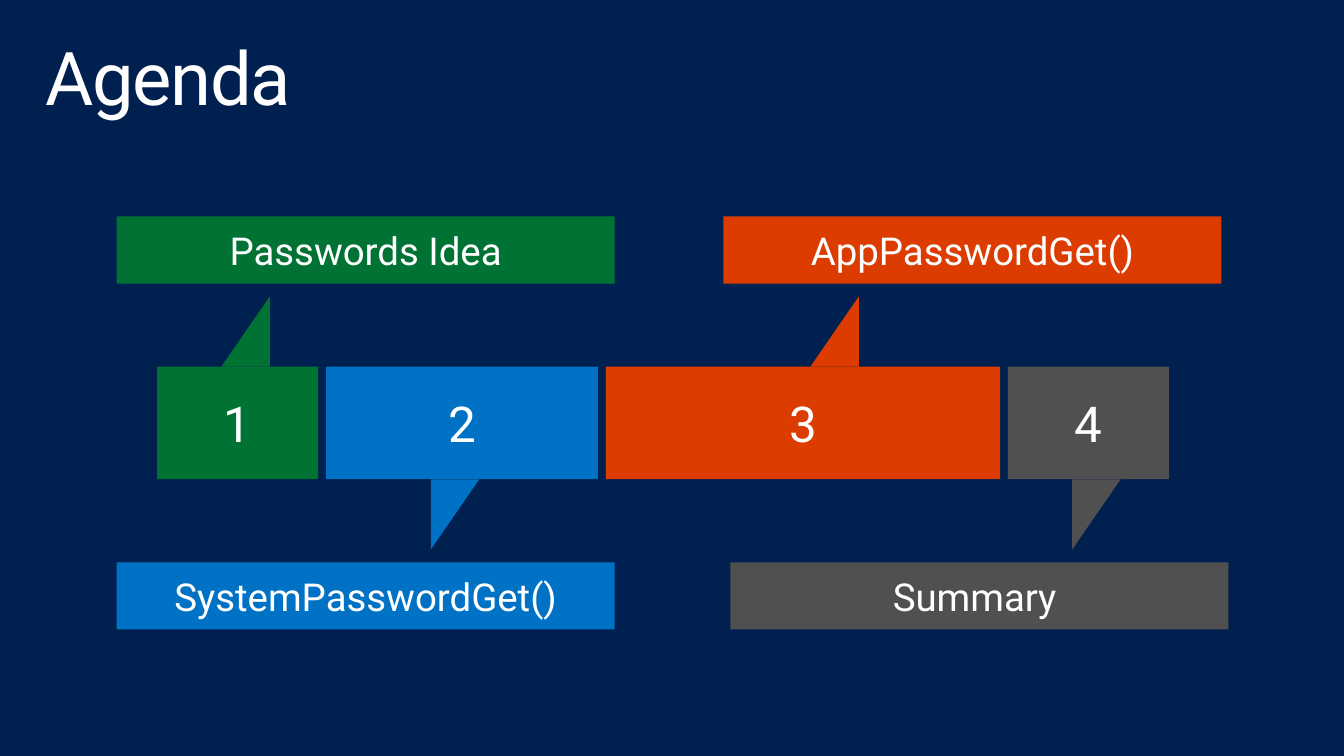
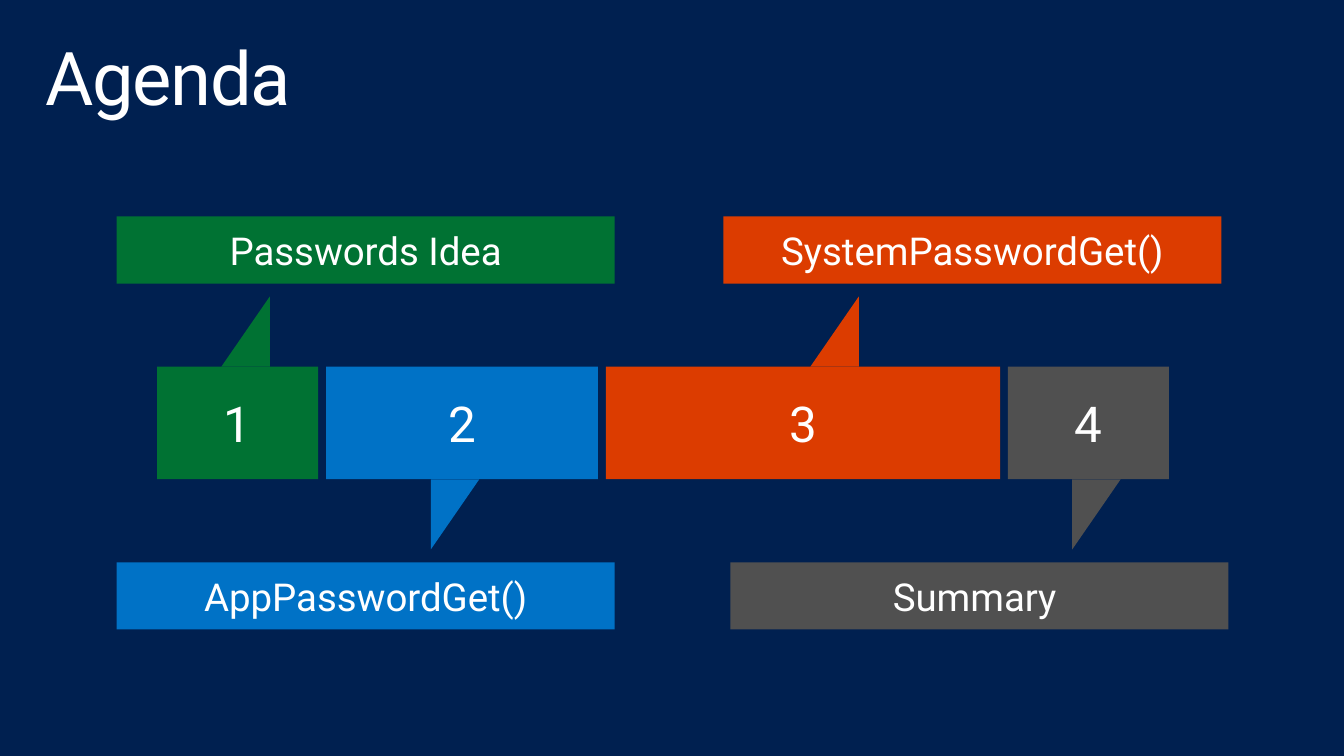
from pptx import Presentation
from pptx.dml.color import RGBColor
from pptx.enum.shapes import MSO_SHAPE
from pptx.enum.text import MSO_ANCHOR, MSO_AUTO_SIZE, PP_ALIGN
from pptx.util import Inches, Pt

RECT, WEDGE = MSO_SHAPE.RECTANGLE, MSO_SHAPE.RIGHT_TRIANGLE
TOP, MIDDLE = MSO_ANCHOR.TOP, MSO_ANCHOR.MIDDLE
LEFT, CENTER = PP_ALIGN.LEFT, PP_ALIGN.CENTER
FIXED = MSO_AUTO_SIZE.NONE

NAVY, WHITE = "002050", "FFFFFF"
GREEN, BLUE, RED, GRAY = "007233", "0072C6", "DC3C00", "505050"

# Bar row, pointers and labels
START, GAP = 1.59, 0.08
BAR_TOP, BAR_H = 3.71, 1.14
TIP_W, TIP_H = 0.49, 0.71
TAG_W, TAG_H = 5.04, 0.68
TAG_HIGH, TAG_LOW = 2.19, 5.69

# Colour, bar width, pointer offset in bar, label left, label above the row
PARTS = [
    (GREEN, 1.63, 0.65, 1.18, True),
    (BLUE, 2.75, 1.06, 1.18, False),
    (RED, 3.99, 2.07, 7.32, True),
    (GRAY, 1.63, 0.65, 7.39, False),
]

AGENDAS = [
    ["Passwords Idea", "SystemPasswordGet()", "AppPasswordGet()", "Summary "],
    ["Passwords Idea", "AppPasswordGet()", "SystemPasswordGet()", "Summary "],
]


def color(code):
    return RGBColor.from_string(code)


def assign(item, values):
    for name, value in values.items():
        setattr(item, name, value)


class Deck:
    """Holds the shared style and the current slide."""

    font = "Roboto"

    def __init__(self):
        self.prs = Presentation()
        assign(self.prs, {"slide_width": Inches(13.6),
                          "slide_height": Inches(7.65)})
        fill = self.prs.slide_master.background.fill
        fill.solid()
        fill.fore_color.rgb = color(NAVY)

    def page(self, title):
        layout = self.prs.slide_layouts.get_by_name("Title Only")
        self.slide = self.prs.slides.add_slide(layout)
        self.title(title)

    def text(self, shape, words, size, align, anchor, pad):
        frame = shape.text_frame
        assign(frame, {
            "text": words, "word_wrap": True, "auto_size": FIXED,
            "vertical_anchor": anchor,
            "margin_left": Inches(pad), "margin_right": Inches(pad),
            "margin_top": Inches(0.1), "margin_bottom": Inches(0.1),
        })
        para = frame.paragraphs[0]
        para.alignment = align
        font = para.runs[0].font
        assign(font, {"name": self.font, "size": Pt(size)})
        font.color.rgb = color(WHITE)
        return para

    def title(self, words):
        shape = self.slide.shapes.title
        assign(shape, {"left": Inches(0.3), "top": Inches(0.32),
                       "width": Inches(13), "height": Inches(1)})
        para = self.text(shape, words, 54, LEFT, TOP, 0.16)
        para.line_spacing = 0.9
        # Letter spacing in hundredths of a point
        para.runs[0].font._element.set("spc", "-100")

    def shape(self, group, kind, box, tint):
        shape = group.shapes.add_shape(kind, *map(Inches, box))
        shape.shadow.inherit = False
        shape.fill.solid()
        shape.fill.fore_color.rgb = color(tint)
        shape.line.fill.background()
        return shape

    def block(self, group, box, tint, words, size):
        shape = self.shape(group, RECT, box, tint)
        self.text(shape, words, size, CENTER, MIDDLE, 0.1)

    def pointer(self, group, left, tint, high):
        top = BAR_TOP - TIP_H if high else BAR_TOP + BAR_H
        shape = self.shape(group, WEDGE, (left, top, TIP_W, TIP_H), tint)
        shape._element.spPr.xfrm.set("flipV", "1")
        if high:
            shape.rotation = 180

    def agenda(self, labels):
        left = START
        for num, (label, part) in enumerate(zip(labels, PARTS), 1):
            tint, width, shift, tag, high = part
            group = self.slide.shapes.add_group_shape()
            group.name = f"Agenda part {num}"
            top = TAG_HIGH if high else TAG_LOW
            self.block(group, (tag, top, TAG_W, TAG_H), tint, label, 28)
            self.block(group, (left, BAR_TOP, width, BAR_H), tint, str(num), 36)
            self.pointer(group, left + shift, tint, high)
            left += width + GAP


def main():
    deck = Deck()
    for labels in AGENDAS:
        deck.page("Agenda")
        deck.agenda(labels)
    deck.prs.save("out.pptx")


if __name__ == "__main__":
    main()
